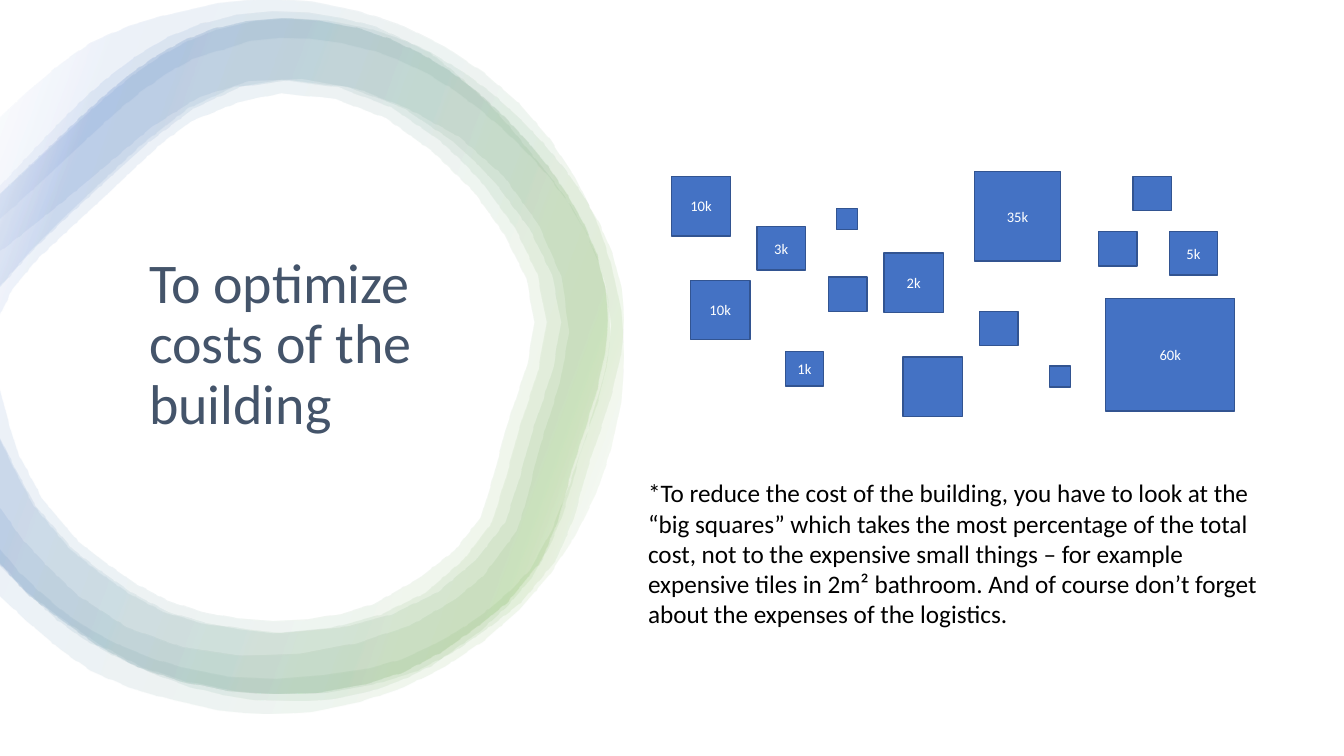
from itertools import chain
from math import dist

from lxml.etree import SubElement as add_element
from pptx import Presentation
from pptx.dml.color import RGBColor
from pptx.enum.shapes import MSO_SHAPE as Shape
from pptx.enum.text import MSO_ANCHOR as Anchor, MSO_AUTO_SIZE as AutoSize, PP_ALIGN as Align
from pptx.oxml.ns import qn
from pptx.util import Pt

FONT = "Calibri"
WHITE = RGBColor(0xFF, 0xFF, 0xFF)
BLACK = RGBColor(0x00, 0x00, 0x00)
SLATE = RGBColor(0x44, 0x54, 0x6A)
BLUE = RGBColor(0x44, 0x72, 0xC4)
BLUE_EDGE = RGBColor(0x32, 0x54, 0x91)
GREEN = RGBColor(0x70, 0xAD, 0x47)

# Ring gradient: position in percent and colour
GRADIENT = [(2, WHITE), (16, GREEN), (85, BLUE), (100, WHITE)]
GRADIENT_ANGLE = 200
RING_ALPHA = 10

# Ring edges, as knots on a grid of 0.72 points
GRID = 0.72
CHORD = 40
WAVY_OUTER = [
    (0, 184), (61, 119), (109, 75), (166, 37), (234, 15), (305, 13),
    (373, 27), (424, 51), (484, 103), (526, 152), (565, 203), (594, 262), (605, 329),
    (593, 396), (574, 452), (557, 511), (527, 572), (476, 625), (428, 659), (366, 685),
    (300, 695), (251, 693), (186, 680), (111, 649), (56, 614), (0, 561)]
WAVY_INNER = [
    (0, 503), (20, 532), (76, 589), (125, 621), (181, 641), (239, 649), (297, 647),
    (353, 637), (407, 619), (450, 594), (478, 571), (511, 527), (520, 501), (535, 441),
    (554, 381), (564, 329), (556, 274), (533, 222), (499, 175), (455, 136), (404, 108),
    (353, 88), (299, 79), (246, 81), (196, 97), (150, 126), (105, 164), (57, 204), (0, 249)]
BAND_OUTER = [
    (0, 192), (56, 139), (104, 94), (155, 55), (212, 28), (279, 18), (353, 27),
    (418, 53), (475, 92), (525, 142), (563, 193), (592, 252), (603, 317), (592, 386),
    (568, 462), (554, 514), (537, 555), (503, 597), (400, 666), (271, 688), (137, 661),
    (27, 588), (0, 558)]
THICK_INNER = [
    (0, 383), (18, 448), (43, 495), (78, 536), (167, 595), (271, 615), (371, 598),
    (451, 545), (477, 512), (490, 469), (502, 423), (523, 360), (530, 319), (522, 276),
    (500, 232), (470, 190), (429, 150), (383, 117), (333, 98), (279, 92), (190, 120),
    (108, 191), (69, 227), (38, 256), (13, 286), (0, 313)]
THIN_INNER = [
    (0, 434), (34, 501), (70, 544), (162, 606), (271, 627), (328, 622), (377, 609),
    (422, 587), (460, 554), (488, 517), (502, 472), (514, 427), (534, 365), (542, 319),
    (533, 272), (511, 226), (479, 182), (436, 139), (388, 106), (335, 86), (279, 79),
    (232, 86), (187, 107), (142, 142), (99, 182), (61, 218), (30, 249), (0, 284)]
ROUND_OUTER = [
    (0, 116), (60, 63), (127, 26), (263, -1), (399, 26), (514, 103), (590, 218), (618, 353),
    (590, 489), (514, 604), (399, 681), (263, 708), (127, 681), (60, 644), (0, 591)]
ROUND_INNER = [
    (0, 544), (17, 565), (65, 608), (120, 640), (179, 661), (226, 670), (273, 672), (366, 662),
    (424, 641), (478, 608), (524, 565), (546, 525), (564, 479), (594, 385),
    (605, 322), (592, 259), (563, 202), (522, 152), (475, 109), (424, 74),
    (367, 50), (307, 39), (247, 41), (190, 59), (138, 92), (90, 134), (42, 179), (0, 217)]

# Outer edge, inner edge, horizontal stretch; from back to front
RINGS = [
    (WAVY_OUTER, WAVY_INNER, 1),
    (BAND_OUTER, THIN_INNER, 1.025),
    (BAND_OUTER, THICK_INNER, 1),
    (BAND_OUTER, THIN_INNER, 1),
    (ROUND_OUTER, ROUND_INNER, 1),
]

# Cost squares: left, top, size, label
LARGE, MEDIUM, SMALL, TINY = (42.5, 42.5), (34.6, 31), (27.4, 24.5), (15.1, 15.1)
COST_SQUARES = [
    (479.5, 126, LARGE, "10k"),
    (540.7, 162, MEDIUM, "3k"),
    (493.2, 200.2, LARGE, "10k"),
    (591.8, 198, SMALL, ""),
    (631.4, 180.7, LARGE, "2k"),
    (699.8, 222.5, SMALL, ""),
    (645.1, 254.9, LARGE, ""),
    (749.5, 261.4, TINY, ""),
    (560.9, 251.3, SMALL, "1k"),
    (696.2, 122.4, (61.2, 64.1), "35k"),
    (789.8, 213.1, (92.2, 80.6), "60k"),
    (597.6, 149, TINY, ""),
    (784.8, 165.6, SMALL, ""),
    (809.3, 126, SMALL, ""),
    (835.2, 165.6, MEDIUM, "5k"),
]

TITLE = "To optimize costs of the building"
NOTE = ("*To reduce the cost of the building, you have to look at the “big squares” which takes "
        "the most percentage of the total cost, not to the expensive small things – for example "
        "expensive tiles in 2m² bathroom. And of course don’t forget about the expenses of the "
        "logistics.")


def smooth(knots):
    """Return points on a Catmull-Rom curve, about one chord apart."""
    padded = [knots[0], *knots, knots[-1]]
    points = [knots[0]]
    for quad in zip(padded, padded[1:], padded[2:], padded[3:]):
        steps = max(1, round(dist(quad[1], quad[2]) / CHORD))
        for step in range(1, steps + 1):
            t = step / steps
            points.append(tuple(
                b + t * (c - a) / 2 + t**2 * (2 * a - 5 * b + 4 * c - d) / 2
                + t**3 * (3 * b - a - 3 * c + d) / 2
                for a, b, c, d in zip(*quad)))
    return points


def fill_gradient(shape):
    """Give the shape the translucent four-stop gradient."""
    shape.fill.background()
    properties = shape.fill._xPr
    empty = properties.find(qn("a:noFill"))
    gradient = add_element(properties, qn("a:gradFill"), rotWithShape="1")
    stops = add_element(gradient, qn("a:gsLst"))
    for position, color in GRADIENT:
        stop = add_element(stops, qn("a:gs"), pos=str(position * 1000))
        tint = add_element(stop, qn("a:srgbClr"), val=str(color))
        add_element(tint, qn("a:alpha"), val=str(RING_ALPHA * 1000))
    add_element(gradient, qn("a:lin"), ang=str(GRADIENT_ANGLE * 60000), scaled="0")
    properties.replace(empty, gradient)


def add_ring(group, outer, inner, stretch):
    points = [(Pt(x * stretch * GRID), Pt(y * GRID))
              for x, y in chain(smooth(outer), smooth(inner))]
    builder = group.shapes.build_freeform(*points[0])
    builder.add_line_segments(points[1:], close=True)
    ring = builder.convert_to_shape()
    ring.shadow.inherit = False
    fill_gradient(ring)
    ring.line.fill.background()


def write_text(frame, text, *, size, color, align=Align.LEFT, anchor=Anchor.TOP,
               line_spacing=None, space_after=None):
    frame.word_wrap = True
    frame.vertical_anchor = anchor
    para = frame.paragraphs[0]
    para.alignment = align
    para.line_spacing = line_spacing
    para.space_after = space_after
    span = para.add_run()
    span.text = text
    span.font.name = FONT
    span.font.size = Pt(size)
    span.font.color.rgb = color


def add_text_box(page, left, top, width, height, text, **style):
    box = page.shapes.add_textbox(Pt(left), Pt(top), Pt(width), Pt(height))
    write_text(box.text_frame, text, **style)
    return box


def add_cost_square(page, left, top, size, label):
    square = page.shapes.add_shape(Shape.RECTANGLE, Pt(left), Pt(top), *map(Pt, size))
    square.shadow.inherit = False
    square.fill.solid()
    square.fill.fore_color.rgb = BLUE
    square.line.color.rgb = BLUE_EDGE
    square.line.width = Pt(1)
    if label:
        frame = square.text_frame
        frame.margin_left = frame.margin_right = frame.margin_top = frame.margin_bottom = 0
        write_text(frame, label, size=10.4, color=WHITE, align=Align.CENTER,
                   anchor=Anchor.MIDDLE, space_after=Pt(6))


def main():
    deck = Presentation()
    deck.slide_width, deck.slide_height = Pt(960), Pt(540)
    page = deck.slides.add_slide(deck.slide_layouts[6])

    # Watercolour ring with the title inside
    group = page.shapes.add_group_shape()
    for ring in RINGS:
        add_ring(group, *ring)
    add_text_box(page, 99.4, 136.1, 288, 221.8, TITLE, size=40, color=SLATE,
                 anchor=Anchor.MIDDLE, line_spacing=0.9)

    # Cost squares
    for square in COST_SQUARES:
        add_cost_square(page, *square)

    # Explanation
    note = add_text_box(page, 455.8, 337.7, 452.2, 116.6, NOTE, size=18, color=BLACK)
    note.text_frame.auto_size = AutoSize.SHAPE_TO_FIT_TEXT

    deck.save("out.pptx")


if __name__ == "__main__":
    main()
